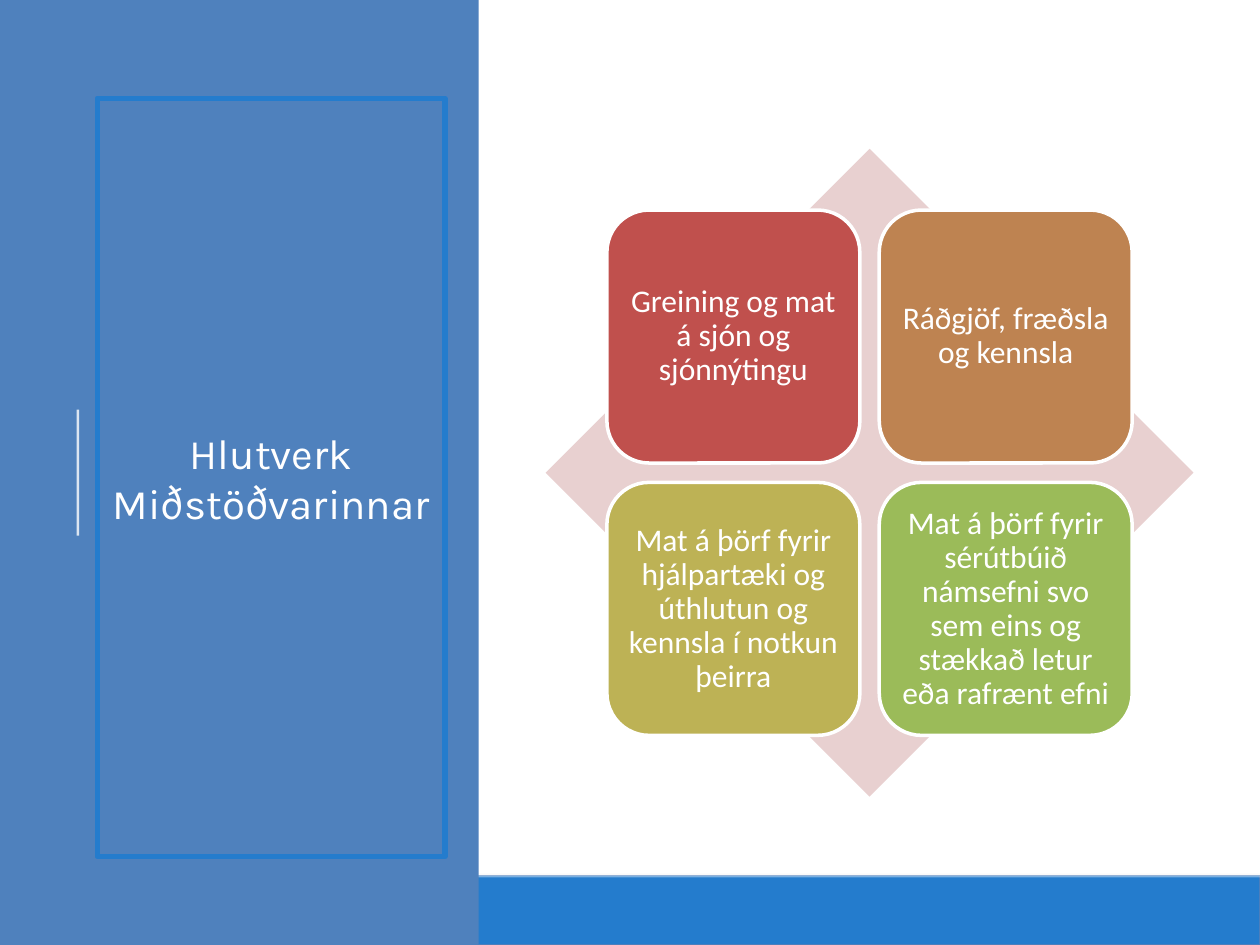
from lxml import etree
from pptx import Presentation
from pptx.dml.color import RGBColor
from pptx.enum import shapes, text
from pptx.oxml import parse_xml
from pptx.oxml.ns import nsdecls, qn
from pptx.util import Cm, Pt

TITLE = "Hlutverk Miðstöðvarinnar"
ROLES = [
    ("Greining og mat á sjón og sjónnýtingu", "red"),
    ("Ráðgjöf, fræðsla og kennsla", "orange"),
    ("Mat á þörf fyrir hjálpartæki og úthlutun og kennsla í notkun þeirra", "olive"),
    ("Mat á þörf fyrir sérútbúið námsefni svo sem eins og stækkað letur eða rafrænt efni", "green"),
]
COLORS = {
    "white": "FFFFFF", "panel": "4F81BD", "bar": "247CCD", "bar_edge": "4B7EBC",
    "diamond": "E8D0D0", "red": "C0504D", "orange": "BE8351",
    "olive": "BDB255", "green": "9BBB59",
}
WIDTH, HEIGHT = 25.4, 19.05
BAR_TOP = 17.65
DIAMOND_LEFT, DIAMOND_TOP, DIAMOND_SIZE = 11.0, 3.0, 13.06
CARD_SIZE, CARD_STEP = 5.1, 5.49


def color(name):
    return RGBColor.from_string(COLORS[name])


def add_box(parent, kind, left, top, width, height, fill, line=None, line_width=0):
    shape = parent.add_shape(kind, Cm(left), Cm(top), Cm(width), Cm(height))
    shape.shadow.inherit = False
    shape.fill.solid()
    shape.fill.fore_color.rgb = color(fill)
    if line:
        shape.line.color.rgb = color(line)
        shape.line.width = Pt(line_width)
    else:
        shape.line.fill.background()
    return shape


def add_rule(parent, start, end, width, opacity):
    rule = parent.add_connector(
        shapes.MSO_CONNECTOR.STRAIGHT, *[Cm(value) for value in start + end])
    rule.line.color.rgb = color("white")
    rule.line.width = Pt(width)
    properties = rule._element.spPr
    fill = properties.find(".//" + qn("a:srgbClr"))
    etree.SubElement(fill, qn("a:alpha")).set("val", str(opacity * 1000))
    etree.SubElement(properties, qn("a:effectLst"))


def set_text(shape, content, font, size):
    frame = shape.text_frame
    frame.text = content
    frame.word_wrap = True
    frame.auto_size = text.MSO_AUTO_SIZE.NONE
    frame.vertical_anchor = text.MSO_ANCHOR.MIDDLE
    paragraph = frame.paragraphs[0]
    paragraph.alignment = text.PP_ALIGN.CENTER
    paragraph.font.name = font
    paragraph.font.size = Pt(size)
    paragraph.font.color.rgb = color("white")
    return frame


def add_background(slide):
    bar = add_box(slide.shapes, shapes.MSO_SHAPE.RECTANGLE, 0, BAR_TOP,
                  WIDTH, HEIGHT - BAR_TOP, "bar", "bar_edge", 0.75)
    bar._element.spPr.find(qn("a:effectLst")).append(parse_xml(
        f'<a:outerShdw {nsdecls("a")} blurRad="{Pt(3.1)}" dist="{Pt(1.8)}" dir="5400000" '
        'rotWithShape="0"><a:srgbClr val="000000"><a:alpha val="35000"/></a:srgbClr></a:outerShdw>'))
    add_rule(slide.shapes, (0, BAR_TOP), (WIDTH, BAR_TOP), 2, 40)
    add_box(slide.shapes, shapes.MSO_SHAPE.RECTANGLE, 0, 0, 9.65, HEIGHT, "panel")


def add_title(slide):
    title = slide.shapes.title
    slide.shapes._spTree.append(title._element)
    title.left, title.top, title.width, title.height = Cm(1.96), Cm(1.98), Cm(7.01), Cm(15.29)
    title.line.color.rgb = color("bar")
    title.line.width = Pt(3)
    set_text(title, TITLE, "Karla", 24)
    add_rule(slide.shapes, (1.57, 10.8), (1.57, 8.26), 1.5, 80)


def add_matrix(slide):
    group = slide.shapes.add_group_shape().shapes
    add_box(group, shapes.MSO_SHAPE.DIAMOND, DIAMOND_LEFT, DIAMOND_TOP,
            DIAMOND_SIZE, DIAMOND_SIZE, "diamond")
    margin = (DIAMOND_SIZE - CARD_SIZE - CARD_STEP) / 2
    for index, (role, fill) in enumerate(ROLES):
        row, column = divmod(index, 2)
        card = add_box(group, shapes.MSO_SHAPE.ROUNDED_RECTANGLE,
                       DIAMOND_LEFT + margin + column * CARD_STEP,
                       DIAMOND_TOP + margin + row * CARD_STEP,
                       CARD_SIZE, CARD_SIZE, fill, "white", 2)
        frame = set_text(card, role, "Calibri", 18)
        frame.paragraphs[0].line_spacing = 0.9
        frame.margin_left = frame.margin_right = Cm(0.18)
        frame.margin_top = frame.margin_bottom = Cm(0.18)


def main():
    presentation = Presentation()
    presentation.slide_width, presentation.slide_height = Cm(WIDTH), Cm(HEIGHT)
    slide = presentation.slides.add_slide(presentation.slide_layouts[5])
    add_background(slide)
    add_title(slide)
    add_matrix(slide)
    presentation.save("out.pptx")


if __name__ == "__main__":
    main()
